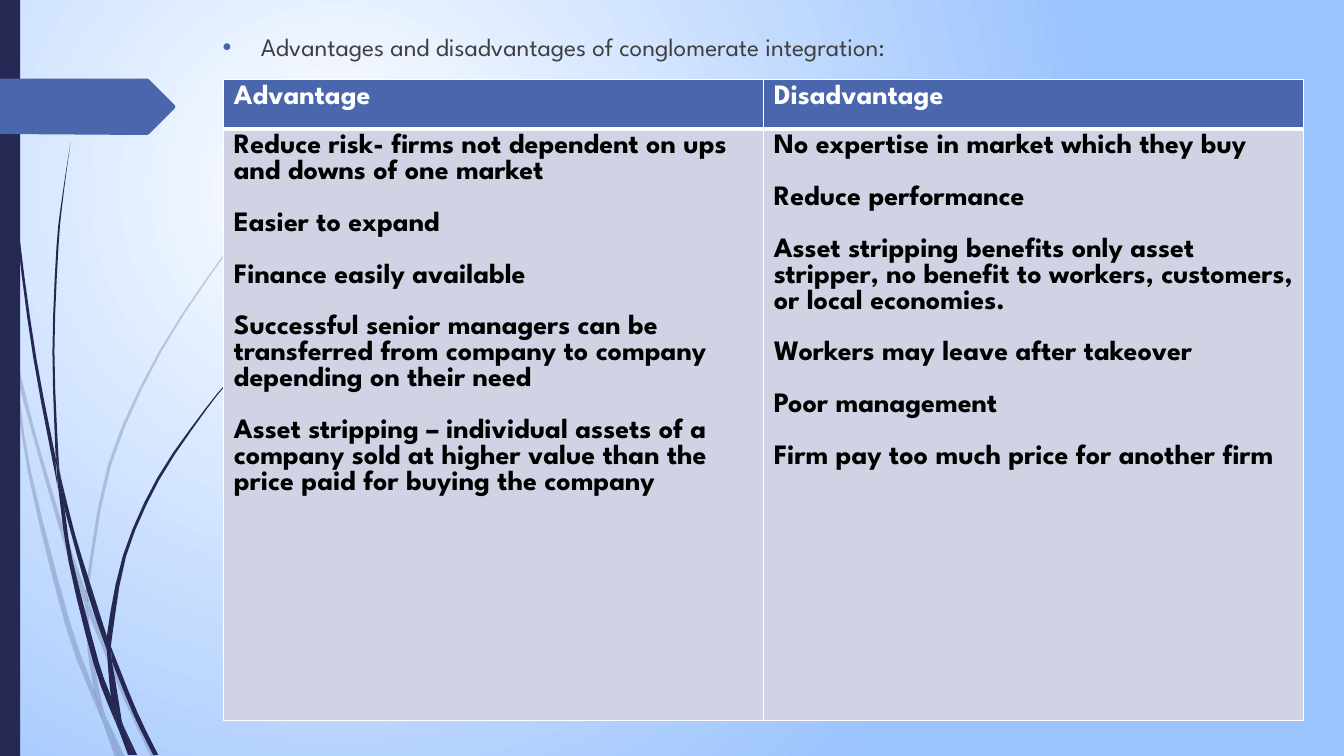
from dataclasses import dataclass

from lxml.etree import SubElement
from pptx import Presentation
from pptx.dml.color import RGBColor
from pptx.enum.shapes import MSO_SHAPE as Kind
from pptx.oxml import parse_xml
from pptx.oxml.ns import nsdecls, qn
from pptx.util import Pt

PX = 9144  # EMU in one px, 100 px to the inch
FONT = "League Spartan"
NAVY = RGBColor(0x24, 0x28, 0x52)
BLUE = RGBColor(0x4A, 0x66, 0xAC)
SKY = RGBColor(0x9B, 0xC3, 0xFE)
PALE = RGBColor(0xD0, 0xD3, 0xE3)
GREY = RGBColor(0x40, 0x40, 0x40)
WHITE = RGBColor(0xFF, 0xFF, 0xFF)
BLACK = RGBColor(0, 0, 0)

Edge = list[tuple[float, float]]


@dataclass
class Blade:
    """Part of a grass blade: one edge out, the other coming back."""
    out: Edge
    back: Edge


@dataclass
class Column:
    title: str
    points: list[str]


FAINT = [
    Blade([(0, 282), (9, 322), (11, 350)], [(10, 344), (0, 299)]),
    Blade([(14, 345), (36, 433), (62, 520), (85, 586)],
          [(84, 599), (58, 522), (17, 376)]),
    Blade([(88, 596), (92, 607), (127, 692), (155, 751)],
          [(150, 751), (123, 694), (88, 610)]),
    Blade([(105, 711), (124, 751)], [(119, 751), (105, 711)]),
    Blade([(11, 350), (17, 376), (31, 469), (70, 619), (93, 683), (101, 714)],
          [(92, 693), (65, 621), (28, 470), (11, 350)]),
    Blade([(84, 599), (87, 646), (93, 683), (96, 692), (105, 711)],
          [(103, 706), (91, 646), (88, 610), (84, 599)]),
    Blade([(88, 596), (88, 584), (110, 462), (160, 349), (229, 245),
           (268, 198), (312, 154)],
          [(312, 153), (268, 197), (228, 244), (158, 348), (107, 461),
           (85, 584), (85, 586)]),
    Blade([(101, 714), (114, 751)], [(119, 751), (101, 714)]),
    Blade([(88, 608), (88, 610), (88, 596)], [(85, 586), (84, 599)]),
    Blade([(93, 683), (99, 707), (101, 714), (119, 751)],
          [(119, 751), (105, 711), (96, 692), (93, 683)]),
]
DARK = [
    Blade([(3, 0), (4, 48), (7, 110), (17, 233), (33, 355), (56, 477),
           (57, 481)],
          [(55, 457), (55, 453), (36, 355), (19, 232), (8, 109), (5, 48),
           (4, 0)]),
    Blade([(60, 472), (75, 532), (93, 590), (106, 631)],
          [(106, 645), (88, 592), (64, 505)]),
    Blade([(110, 641), (113, 649), (136, 706), (157, 749)],
          [(152, 749), (132, 708), (111, 656)]),
    Blade([(57, 477), (64, 505), (72, 556), (98, 657), (110, 691),
           (117, 722)],
          [(111, 708), (93, 659), (68, 557), (57, 477)]),
    Blade([(70, 141), (63, 193), (58, 245), (54, 349), (58, 453), (60, 472)],
          [(55, 449), (52, 349), (56, 245), (62, 193), (70, 141)]),
    Blade([(122, 719), (136, 749)], [(133, 749), (122, 719)]),
    Blade([(57, 477), (64, 505), (60, 472)], [(55, 449), (57, 477)]),
    Blade([(111, 633), (125, 552), (158, 476), (205, 406), (231, 374),
           (245, 359), (261, 344)],
          [(260, 344), (245, 358), (231, 373), (204, 405), (156, 474),
           (122, 551), (106, 631), (110, 641)]),
    Blade([(117, 722), (127, 749)], [(131, 749), (117, 722)]),
    Blade([(106, 645), (110, 691), (116, 706), (122, 719)],
          [(121, 716), (111, 656), (106, 645)]),
    Blade([(106, 645), (109, 651), (111, 656)], [(110, 641), (106, 631)]),
    Blade([(110, 691), (116, 717), (117, 722), (130, 749)],
          [(133, 749), (122, 719), (116, 706), (110, 691)]),
]

TAG = [(0, 78), (146, 78), (148, 79), (173, 104), (174, 106), (173, 108),
       (148, 133), (146, 134), (0, 133)]

COLUMNS = [
    Column("Advantage", [
        "Reduce risk- firms not dependent on ups and downs of one market",
        "Easier to expand",
        "Finance easily available",
        "Successful senior managers can be transferred from company to "
        "company depending on their need",
        "Asset stripping – individual assets of a company sold at higher "
        "value than the price paid for buying the company",
    ]),
    Column("Disadvantage", [
        "No expertise in market which they buy",
        "Reduce performance",
        "Asset stripping benefits only asset stripper, no benefit to "
        "workers, customers, or local economies.",
        "Workers may leave after takeover",
        "Poor management",
        "Firm pay too much price for another firm",
    ]),
]


def box(*sides: int) -> list[int]:
    return [side * PX for side in sides]


def curve(edge: Edge, steps: int = 3) -> Edge:
    """Smooth an edge with a Catmull-Rom spline; two points stay straight."""
    if len(edge) == 2:
        return edge
    ends = [edge[0], *edge, edge[-1]]
    out = [edge[0]]
    for a, b, c, d in zip(ends, ends[1:], ends[2:], ends[3:]):
        for n in range(1, steps + 1):
            t = n / steps
            out.append(tuple(
                (2 * q + (r - p) * t + (2 * p - 5 * q + 4 * r - s) * t ** 2
                 + (3 * q - p - 3 * r + s) * t ** 3) / 2
                for p, q, r, s in zip(a, b, c, d)))
    return out


def paint(shape, color: RGBColor, alpha: int = 100) -> None:
    shape.shadow.inherit = False
    shape.fill.solid()
    shape.fill.fore_color.rgb = color
    shape.line.fill.background()
    if alpha < 100:
        tint = shape.fill._xPr.find(".//" + qn("a:srgbClr"))
        SubElement(tint, qn("a:alpha"), val=str(alpha * 1000))


def draw_path(slide, dots: Edge, color: RGBColor, alpha: int = 100) -> None:
    first, *rest = [(x * PX, y * PX) for x, y in dots]
    pen = slide.shapes.build_freeform(*first, scale=1.0)
    pen.add_line_segments(rest, close=True)
    paint(pen.convert_to_shape(), color, alpha)


def style(para, size: int, color: RGBColor, bold: bool = False) -> None:
    for run in para.runs:
        font = run.font
        font.name, font.size, font.bold = FONT, Pt(size), bold
        font.color.rgb = color


def fill_cell(cell, lines: list[str], back: RGBColor, ink: RGBColor,
              base: int) -> None:
    frame = cell.text_frame
    frame.text = "\n".join(lines)
    for n, para in enumerate(frame.paragraphs):
        style(para, 20, ink, True)
        if n:
            para.space_before = Pt(18.5)
    props = cell._tc.get_or_add_tcPr()
    for side, width in (("L", 1), ("R", 1), ("T", 1), ("B", base)):
        props.append(parse_xml(
            f'<a:ln{side} {nsdecls("a")} w="{Pt(width)}"><a:solidFill>'
            f'<a:srgbClr val="{WHITE}"/></a:solidFill></a:ln{side}>'))
    cell.fill.solid()
    cell.fill.fore_color.rgb = back


def draw_table(slide) -> None:
    table = slide.shapes.add_table(2, 2, *box(222, 79, 1071, 636)).table
    table.first_row = table.horz_banding = False
    for row, height in zip(table.rows, (49, 587)):
        row.height = height * PX
    for n, col in enumerate(COLUMNS):
        fill_cell(table.cell(0, n), [col.title], BLUE, WHITE, 3)
        fill_cell(table.cell(1, n), col.points, PALE, BLACK, 1)


def draw_intro(slide) -> None:
    frame = slide.shapes.add_textbox(*box(211, 26, 1047, 621)).text_frame
    frame.word_wrap = True
    para = frame.paragraphs[0]
    para.text = "Advantages and disadvantages of conglomerate integration:"
    para.space_before = Pt(10)
    style(para, 18, GREY)
    props = para._p.get_or_add_pPr()
    props.set("marL", str(38 * PX))
    props.set("indent", str(-38 * PX))
    tint = SubElement(props, qn("a:buClr"))
    SubElement(tint, qn("a:srgbClr"), val=str(BLUE))
    SubElement(props, qn("a:buFont"), typeface="Arial")
    SubElement(props, qn("a:buChar"), char="•")


def draw_back(slide) -> None:
    slide.background.fill.solid()
    props = slide._element.cSld.bg.bgPr
    props.replace(props[0], parse_xml(
        f'<a:gradFill {nsdecls("a")} rotWithShape="1"><a:gsLst>'
        f'<a:gs pos="0"><a:srgbClr val="{WHITE}"/></a:gs>'
        f'<a:gs pos="100000"><a:srgbClr val="{SKY}"/></a:gs></a:gsLst>'
        '<a:path path="circle"><a:fillToRect l="50000" t="50000" '
        'r="100000" b="100000"/></a:path></a:gradFill>'))


def main() -> None:
    deck = Presentation()
    deck.slide_width, deck.slide_height = box(1333, 750)
    slide = deck.slides.add_slide(deck.slide_layouts[6])
    draw_back(slide)
    for blades, alpha in ((FAINT, 20), (DARK, 100)):
        for blade in blades:
            dots = curve(blade.out) + curve(blade.back)
            draw_path(slide, dots, NAVY, alpha)
    # Side bar and arrow tag
    paint(slide.shapes.add_shape(Kind.RECTANGLE, *box(0, 0, 20, 750)), NAVY)
    draw_path(slide, TAG, BLUE)
    draw_intro(slide)
    draw_table(slide)
    deck.save("out.pptx")


if __name__ == "__main__":
    main()
